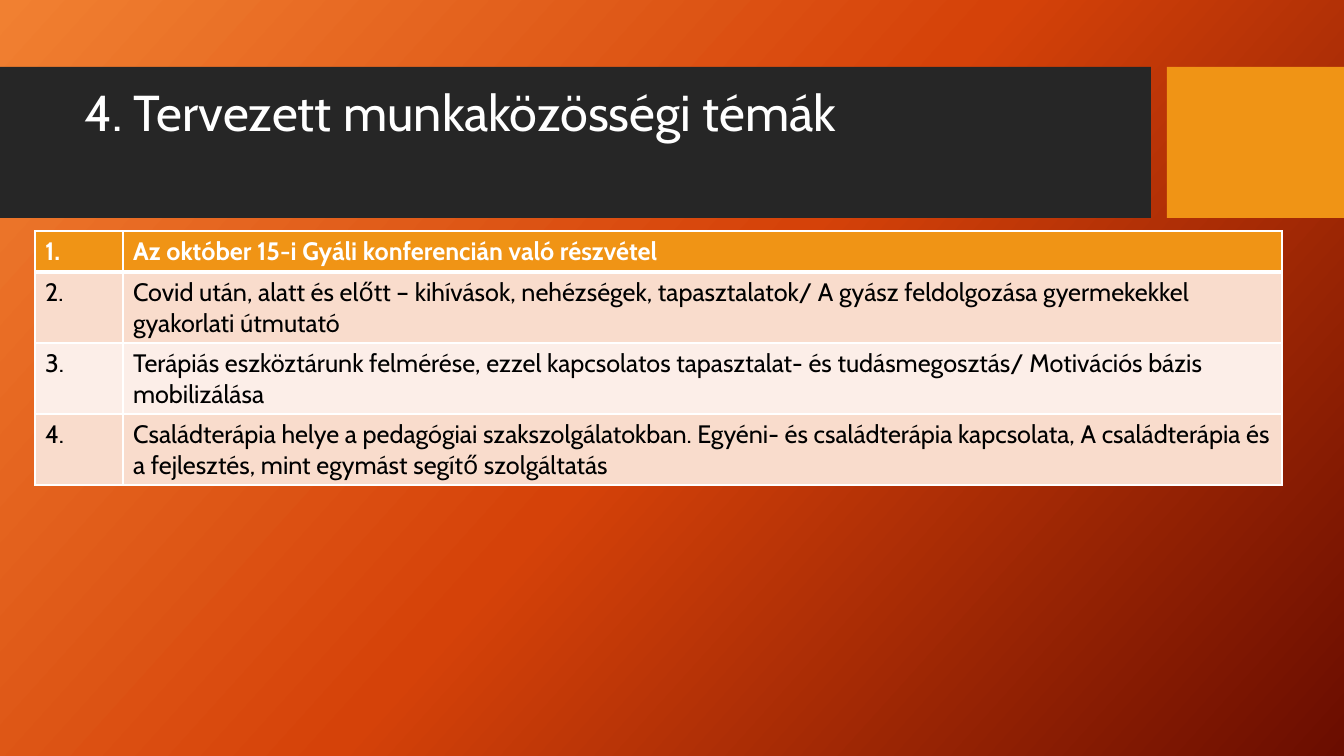
import copy
from dataclasses import dataclass

import pptx
import pptx.dml.color
import pptx.enum.shapes
import pptx.enum.text
import pptx.oxml
import pptx.oxml.ns
import pptx.slide
import pptx.table
import pptx.text.text
import pptx.util

RGBColor = pptx.dml.color.RGBColor

EMU_PER_PX = 914400 / 100.8
FONT = "Cabin"

WHITE = RGBColor(0xFF, 0xFF, 0xFF)
BLACK = RGBColor(0x00, 0x00, 0x00)
CHARCOAL = RGBColor(0x26, 0x26, 0x26)
AMBER = RGBColor(0xF0, 0x94, 0x15)
PEACH = RGBColor(0xF9, 0xDC, 0xCC)
PALE_PEACH = RGBColor(0xFC, 0xEE, 0xE8)
BACKGROUND = (
    RGBColor(0xF1, 0x80, 0x31),
    RGBColor(0xD5, 0x42, 0x09),
    RGBColor(0x6A, 0x0D, 0x00),
)


@dataclass(frozen=True)
class Band:
    left: int
    width: int
    color: RGBColor


@dataclass(frozen=True)
class Topic:
    number: str
    title: str


BAND_TOP, BAND_HEIGHT = 67, 151
BANDS = (Band(0, 1151, CHARCOAL), Band(1167, 177, AMBER))

TITLE = "4. Tervezett munkaközösségi témák"
TOPICS = (
    Topic("1.", "Az október 15-i Gyáli konferencián való részvétel"),
    Topic(
        "2.",
        "Covid után, alatt és előtt – kihívások, nehézségek, tapasztalatok/ "
        "A gyász feldolgozása gyermekekkel gyakorlati útmutató",
    ),
    Topic(
        "3.",
        "Terápiás eszköztárunk felmérése, ezzel kapcsolatos tapasztalat- és "
        "tudásmegosztás/ Motivációs bázis mobilizálása",
    ),
    Topic(
        "4.",
        "Családterápia helye a pedagógiai szakszolgálatokban. Egyéni- és "
        "családterápia kapcsolata, A családterápia és a fejlesztés, mint "
        "egymást segítő szolgáltatás",
    ),
)
COLUMN_WIDTHS = (88, 1159)
HEADER_HEIGHT, ROW_HEIGHT = 41, 71


def px(value: int) -> pptx.util.Emu:
    return pptx.util.Emu(round(value * EMU_PER_PX))


def style_text(
    p: pptx.text.text._Paragraph, size: int, color: RGBColor, bold: bool = False
) -> None:
    for r in p.runs:
        r.font.name = FONT
        r.font.size = pptx.util.Pt(size)
        r.font.bold = bold
        r.font.color.rgb = color


def paint_background(s: pptx.slide.Slide) -> None:
    fill = s.background.fill
    fill.gradient()
    fill.gradient_angle = 318
    first = s.background._cSld.find(".//" + pptx.oxml.ns.qn("a:gs"))
    first.addnext(copy.deepcopy(first))
    for i, (stop, color) in enumerate(zip(fill.gradient_stops, BACKGROUND)):
        stop.position = i / (len(BACKGROUND) - 1)
        stop.color.rgb = color


def draw_band(s: pptx.slide.Slide, band: Band) -> None:
    sp = s.shapes.add_shape(
        pptx.enum.shapes.MSO_SHAPE.RECTANGLE,
        px(band.left), px(BAND_TOP), px(band.width), px(BAND_HEIGHT),
    )
    sp.shadow.inherit = False
    sp.fill.solid()
    sp.fill.fore_color.rgb = band.color
    sp.line.fill.background()


def draw_title(s: pptx.slide.Slide) -> None:
    sp = s.shapes.add_textbox(px(75), px(83), px(1059), px(119))
    tf = sp.text_frame
    tf.word_wrap = True
    tf.vertical_anchor = pptx.enum.text.MSO_ANCHOR.TOP
    tf.text = TITLE
    p = tf.paragraphs[0]
    p.line_spacing = 0.9
    style_text(p, 36, WHITE)


def add_border(cell: pptx.table._Cell, side: str, points: int) -> None:
    ns = pptx.oxml.ns.nsdecls("a")
    cell._tc.get_or_add_tcPr().append(pptx.oxml.parse_xml(
        f'<a:{side} {ns} w="{pptx.util.Pt(points)}"><a:solidFill>'
        f'<a:srgbClr val="{WHITE}"/></a:solidFill></a:{side}>'
    ))


def fill_cell(cell: pptx.table._Cell, text: str, row: int) -> None:
    header = row == 0
    add_border(cell, "lnL", 1)
    add_border(cell, "lnR", 1)
    add_border(cell, "lnT", 3 if row == 1 else 1)
    add_border(cell, "lnB", 3 if header else 1)
    cell.fill.solid()
    cell.fill.fore_color.rgb = AMBER if header else (PALE_PEACH, PEACH)[row % 2]
    cell.text_frame.text = text
    style_text(
        cell.text_frame.paragraphs[0], 18, WHITE if header else BLACK, header
    )


def draw_topics(s: pptx.slide.Slide) -> None:
    heights = [HEADER_HEIGHT] + [ROW_HEIGHT] * (len(TOPICS) - 1)
    table = s.shapes.add_table(
        len(TOPICS), len(COLUMN_WIDTHS),
        px(35), px(231), px(sum(COLUMN_WIDTHS)), px(sum(heights)),
    ).table
    table.first_row = False
    table.horz_banding = False
    for column, width in zip(table.columns, COLUMN_WIDTHS):
        column.width = px(width)
    for i, (topic, height) in enumerate(zip(TOPICS, heights)):
        table.rows[i].height = px(height)
        fill_cell(table.cell(i, 0), topic.number, i)
        fill_cell(table.cell(i, 1), topic.title, i)


def main() -> None:
    prs = pptx.Presentation()
    prs.slide_width, prs.slide_height = px(1344), px(756)
    s = prs.slides.add_slide(prs.slide_layouts[6])
    paint_background(s)
    for band in BANDS:
        draw_band(s, band)
    draw_title(s)
    draw_topics(s)
    prs.save("out.pptx")


if __name__ == "__main__":
    main()
